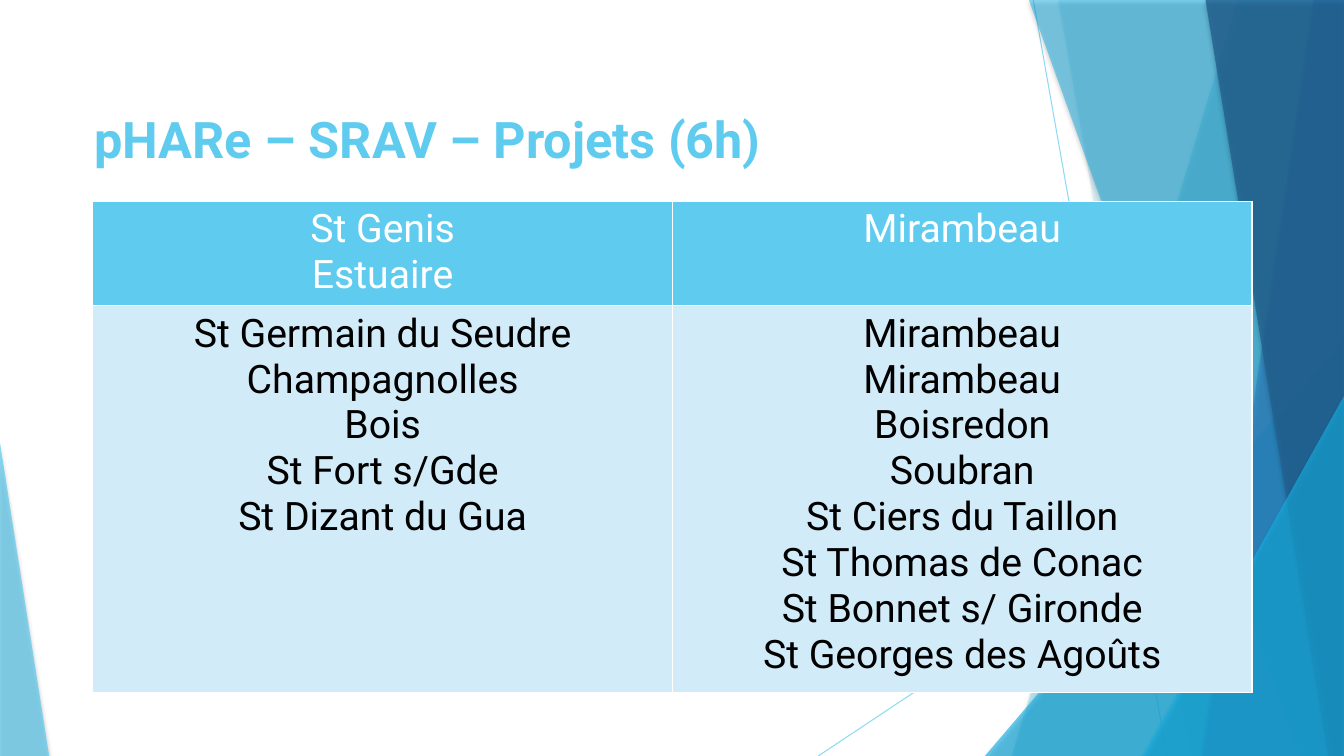
from lxml import etree
from pptx import Presentation
from pptx.dml.color import RGBColor
from pptx.enum.shapes import MSO_CONNECTOR, MSO_SHAPE
from pptx.enum.text import MSO_ANCHOR, PP_ALIGN
from pptx.oxml.ns import qn
from pptx.util import Cm, Pt

STRAIGHT = MSO_CONNECTOR.STRAIGHT
TRIANGLE = MSO_SHAPE.ISOSCELES_TRIANGLE
CENTER = PP_ALIGN.CENTER
TOP = MSO_ANCHOR.TOP

SKY = RGBColor(0x5F, 0xCB, 0xEF)
CYAN = RGBColor(0x17, 0xB0, 0xE4)
BLUE = RGBColor(0x2E, 0x83, 0xC3)
NAVY = RGBColor(0x22, 0x62, 0x92)
PALE = RGBColor(0xD2, 0xEB, 0xF8)
WHITE = RGBColor(0xFF, 0xFF, 0xFF)
BLACK = RGBColor(0x00, 0x00, 0x00)

FONT = "Roboto"
WIDTH, HEIGHT = 33.87, 19.05

SECTORS = [
    (["St Genis", "Estuaire"],
     ["St Germain du Seudre", "Champagnolles", "Bois", "St Fort s/Gde",
      "St Dizant du Gua"]),
    (["Mirambeau"],
     ["Mirambeau", "Mirambeau", "Boisredon", "Soubran", "St Ciers du Taillon",
      "St Thomas de Conac", "St Bonnet s/ Gironde", "St Georges des Agoûts"]),
]


def add_xml(parent, tag, **attributes):
    return etree.SubElement(parent, qn(tag), attributes)


def set_opacity(fill_format_parent, percent):
    """Add an alpha to the solid colour found in the given XML element."""
    color = fill_format_parent.find(qn("a:solidFill"))[0]
    add_xml(color, "a:alpha", val=str(percent * 1000))


def style_facet(facet, color, opacity):
    """Give a background facet its translucent fill and soft shadow."""
    facet.fill.solid()
    facet.fill.fore_color.rgb = color
    facet.line.fill.background()
    facet.shadow.inherit = False
    properties = facet._element.spPr
    set_opacity(properties, opacity)
    shadow = add_xml(properties.find(qn("a:effectLst")), "a:outerShdw",
                     blurRad=str(Pt(3)), dist=str(Pt(2)), dir="5400000",
                     algn="ctr", rotWithShape="0")
    shade = add_xml(shadow, "a:srgbClr", val="000000")
    add_xml(shade, "a:alpha", val="35000")


def add_ray(slide, x1, y1, x2, y2):
    ray = slide.shapes.add_connector(STRAIGHT, Cm(x1), Cm(y1), Cm(x2), Cm(y2))
    ray.line.color.rgb = SKY
    ray.line.width = Pt(0.75)
    set_opacity(ray.line._get_or_add_ln(), 70)
    add_xml(ray._element.spPr, "a:effectLst")


def add_band(slide, top_left, bottom_left, color, opacity):
    """Fill the slide from a slanted left edge to its right side."""
    builder = slide.shapes.build_freeform(Cm(top_left), 0)
    builder.add_line_segments([(Cm(WIDTH), 0), (Cm(WIDTH), Cm(HEIGHT)),
                               (Cm(bottom_left), Cm(HEIGHT))], close=True)
    style_facet(builder.convert_to_shape(), color, opacity)


def add_corner(slide, left, top, right, apex, color, opacity):
    """Draw a right triangle standing on the bottom edge; apex is 0 or 1."""
    corner = slide.shapes.add_shape(TRIANGLE, Cm(left), Cm(top),
                                    Cm(right - left), Cm(HEIGHT - top))
    corner.adjustments[0] = apex
    style_facet(corner, color, opacity)


def add_background(slide):
    add_ray(slide, 26.04, 0, 29.41, HEIGHT)
    add_ray(slide, WIDTH, 10.24, 20.62, HEIGHT)
    add_band(slide, 31.19, 25.5, SKY, 36)
    add_band(slide, 26.67, 30.02, SKY, 20)
    add_corner(slide, 24.82, 8.46, WIDTH, 1, CYAN, 66)
    add_band(slide, 25.93, 32.79, CYAN, 50)
    add_band(slide, 33.1, 30.28, BLUE, 70)
    add_band(slide, 30.38, 33.48, NAVY, 80)
    add_corner(slide, 28.8, 9.98, WIDTH, 1, CYAN, 66)
    add_corner(slide, 0, 11.15, 1.24, 0, SKY, 70)


def format_text(frame, size, color, bold, alignment=None):
    for paragraph in frame.paragraphs:
        paragraph.alignment = alignment
        for run in paragraph.runs:
            run.font.name = FONT
            run.font.size = Pt(size)
            run.font.bold = bold
            run.font.color.rgb = color


def add_title(slide, text):
    title = slide.shapes.add_textbox(Cm(2.13), Cm(2.59), Cm(23.88), Cm(3.66))
    frame = title.text_frame
    frame.word_wrap = True
    frame.vertical_anchor = TOP
    frame.text = text
    format_text(frame, 36, SKY, True)


def add_borders(cell):
    properties = cell._tc.get_or_add_tcPr()
    for side in ("a:lnL", "a:lnR", "a:lnT", "a:lnB"):
        border = add_xml(properties, side, w=str(Pt(0.96)))
        add_xml(add_xml(border, "a:solidFill"), "a:srgbClr", val=str(WHITE))


def fill_cell(cell, places, background, color):
    cell.text_frame.text = "\n".join(places)
    format_text(cell.text_frame, 28, color, False, CENTER)
    add_borders(cell)
    cell.fill.solid()
    cell.fill.fore_color.rgb = background


def add_sector_table(slide):
    table = slide.shapes.add_table(2, len(SECTORS), Cm(2.34), Cm(5.08),
                                   Cm(29.21), Cm(12.07)).table
    table.rows[0].height = Cm(2.57)
    table.rows[1].height = Cm(9.5)
    for column, (sector, schools) in enumerate(SECTORS):
        fill_cell(table.cell(0, column), sector, SKY, WHITE)
        fill_cell(table.cell(1, column), schools, PALE, BLACK)


def main():
    deck = Presentation()
    deck.slide_width = Cm(WIDTH)
    deck.slide_height = Cm(HEIGHT)
    slide = deck.slides.add_slide(deck.slide_layouts[6])
    add_background(slide)
    add_title(slide, "pHARe – SRAV – Projets (6h)")
    add_sector_table(slide)
    deck.save("out.pptx")


if __name__ == "__main__":
    main()
